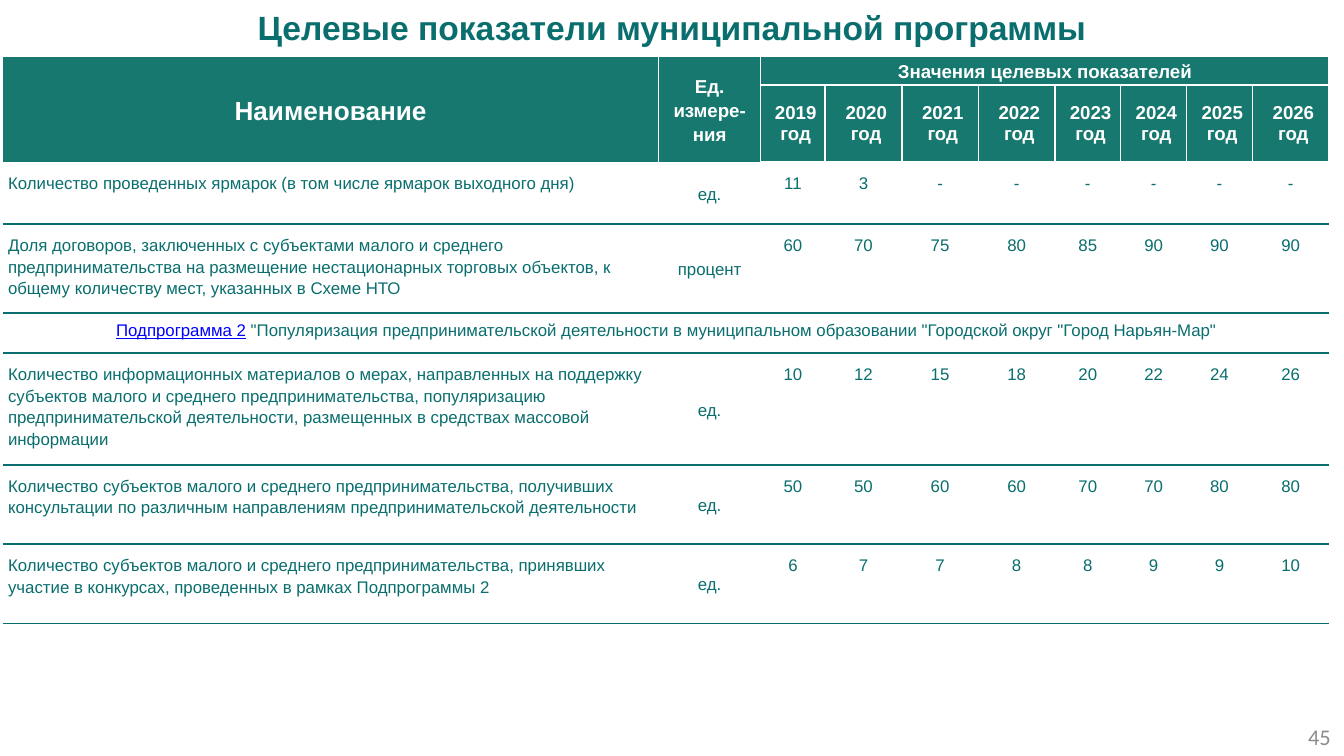
from lxml import etree
from pptx import Presentation
from pptx.dml.color import RGBColor
from pptx.enum.text import MSO_ANCHOR, MSO_AUTO_SIZE, PP_ALIGN
from pptx.oxml.ns import qn
from pptx.util import Inches, Pt

LEFT, CENTER, RIGHT = PP_ALIGN.LEFT, PP_ALIGN.CENTER, PP_ALIGN.RIGHT
TOP, MIDDLE = MSO_ANCHOR.TOP, MSO_ANCHOR.MIDDLE
NO_FIT = MSO_AUTO_SIZE.NONE

TEAL = RGBColor(0x0A, 0x6E, 0x6E)
HEADER_FILL = RGBColor(0x16, 0x78, 0x6E)
WHITE = RGBColor(0xFF, 0xFF, 0xFF)
LINK_BLUE = RGBColor(0x00, 0x00, 0xFF)
GRAY = RGBColor(0x8C, 0x8C, 0x8C)

PLAIN_TABLE_STYLE = "{2D5ABB26-0587-4C30-8999-92F81FD0307C}"
COLUMN_WIDTHS = [4.88, 0.76, 0.48, 0.57, 0.57, 0.57, 0.49, 0.49, 0.49, 0.57]
ROW_HEIGHTS = [0.2, 0.57, 0.46, 0.66, 0.3, 0.83, 0.59, 0.59]
FIRST_YEAR = 2019
FIRST_YEAR_COLUMN = 2

SUBPROGRAM_ROW = 4
SUBPROGRAM = [
    ("Подпрограмма 2", {"color": LINK_BLUE, "underline": True}),
    (' "Популяризация предпринимательской деятельности в муниципальном '
     'образовании "Городской округ "Город Нарьян-Мар"', {}),
]

# Table row: name, unit, values by year
INDICATORS = {
    2: ("Количество проведенных ярмарок (в том числе ярмарок выходного дня)",
        "ед.", [11, 3, "-", "-", "-", "-", "-", "-"]),
    3: ("Доля договоров, заключенных с субъектами малого и среднего "
        "предпринимательства на размещение нестационарных торговых объектов, "
        "к общему количеству мест, указанных в Схеме НТО",
        "процент", [60, 70, 75, 80, 85, 90, 90, 90]),
    5: ("Количество информационных материалов о мерах, направленных на "
        "поддержку субъектов малого и среднего предпринимательства, "
        "популяризацию предпринимательской деятельности, размещенных в "
        "средствах массовой информации",
        "ед.", [10, 12, 15, 18, 20, 22, 24, 26]),
    6: ("Количество субъектов малого и среднего предпринимательства, "
        "получивших консультации по различным направлениям "
        "предпринимательской деятельности",
        "ед.", [50, 50, 60, 60, 70, 70, 80, 80]),
    7: ("Количество субъектов малого и среднего предпринимательства, "
        "принявших участие в конкурсах, проведенных в рамках Подпрограммы 2",
        "ед.", [6, 7, 7, 8, 8, 9, 9, 10]),
}


def write_text(frame, spans, size=9, color=TEAL, bold=False, font="Arial",
               align=CENTER, spacing=None, indent=0):
    """Fill a frame with one paragraph; spans is text or (text, format) pairs."""
    if isinstance(spans, str):
        spans = [(spans, {})]
    para = frame.paragraphs[0]
    para.alignment = align
    if spacing:
        para.line_spacing = spacing
    if indent:
        para._p.get_or_add_pPr().set("marL", str(Inches(indent)))
    for text, look in spans:
        span = para.add_run()
        span.text = text
        span.font.name = font
        span.font.size = Pt(size)
        span.font.bold = bold
        span.font.underline = look.get("underline", False)
        span.font.color.rgb = look.get("color", color)


class SlideBuilder:
    def __init__(self, deck):
        self.slide = deck.slides.add_slide(deck.slide_layouts[5])

    def title(self, text, left, top, width, height):
        box = self.slide.shapes.title
        box.left, box.top = Inches(left), Inches(top)
        box.width, box.height = Inches(width), Inches(height)
        box.text_frame.auto_size = NO_FIT
        box.text_frame.vertical_anchor = MIDDLE
        write_text(box.text_frame, text, size=18, bold=True)

    def page_number(self, text, left, top, width, height):
        box = self.slide.shapes.add_textbox(
            Inches(left), Inches(top), Inches(width), Inches(height))
        box.text_frame.word_wrap = True
        box.text_frame.vertical_anchor = MIDDLE
        write_text(box.text_frame, text, size=12, color=GRAY,
                   font="Calibri", align=RIGHT)

    def table(self, left, top):
        frame = self.slide.shapes.add_table(
            len(ROW_HEIGHTS), len(COLUMN_WIDTHS), Inches(left), Inches(top),
            Inches(sum(COLUMN_WIDTHS)), Inches(sum(ROW_HEIGHTS)))
        table = frame.table
        table.horz_banding = False
        table._tbl.tblPr.find(qn("a:tableStyleId")).text = PLAIN_TABLE_STYLE
        for column, width in zip(table.columns, COLUMN_WIDTHS):
            column.width = Inches(width)
        for row, height in zip(table.rows, ROW_HEIGHTS):
            row.height = Inches(height)
        return table

    def borders(self, cell, sides, color):
        properties = cell._tc.get_or_add_tcPr()
        for side in sides:
            line = etree.SubElement(properties, qn(f"a:ln{side}"), w=str(Pt(1)))
            fill = etree.SubElement(line, qn("a:solidFill"))
            etree.SubElement(fill, qn("a:srgbClr"), val=str(color))

    def cell(self, cell, spans, side=0.04, edge=0.07, anchor=TOP,
             spacing=1.15, **look):
        cell.margin_left = cell.margin_right = Inches(side)
        cell.margin_top = cell.margin_bottom = Inches(edge)
        cell.vertical_anchor = anchor
        write_text(cell.text_frame, spans, spacing=spacing, **look)

    def header_cell(self, cell, text, size=10, side=0, edge=0.01, **look):
        self.cell(cell, text, side=side, edge=edge, anchor=MIDDLE, size=size,
                  color=WHITE, bold=True, **look)


def build_header(builder, table):
    years = range(FIRST_YEAR_COLUMN, len(COLUMN_WIDTHS))
    for column in range(len(COLUMN_WIDTHS)):
        for row in range(2):
            cell = table.cell(row, column)
            if row == 0 and column > FIRST_YEAR_COLUMN:
                sides = "TB"
            elif row == 1 and column < FIRST_YEAR_COLUMN:
                sides = "LR"
            else:
                sides = "LRT"
            builder.borders(cell, sides, WHITE)
            cell.fill.solid()
            cell.fill.fore_color.rgb = HEADER_FILL

    for column in range(FIRST_YEAR_COLUMN):
        table.cell(0, column).merge(table.cell(1, column))
    table.cell(0, FIRST_YEAR_COLUMN).merge(table.cell(0, years[-1]))

    builder.header_cell(table.cell(0, 0), "Наименование", size=14)
    builder.header_cell(table.cell(0, 1), "Ед. измере-ния", side=0.08, edge=0)
    builder.header_cell(table.cell(0, FIRST_YEAR_COLUMN),
                        "Значения целевых показателей")
    for year, column in enumerate(years, FIRST_YEAR):
        builder.header_cell(table.cell(1, column), f"{year} год",
                            spacing=None, indent=0.04)


def build_body(builder, table):
    for row in range(2, len(ROW_HEIGHTS)):
        for column in range(len(COLUMN_WIDTHS)):
            cell = table.cell(row, column)
            builder.borders(cell, "B", TEAL)
            cell.fill.background()

    for row, (name, unit, values) in INDICATORS.items():
        builder.cell(table.cell(row, 0), name, align=LEFT)
        builder.cell(table.cell(row, 1), unit, anchor=MIDDLE)
        for column, value in enumerate(values, FIRST_YEAR_COLUMN):
            builder.cell(table.cell(row, column), str(value))

    subprogram = table.cell(SUBPROGRAM_ROW, 0)
    subprogram.merge(table.cell(SUBPROGRAM_ROW, len(COLUMN_WIDTHS) - 1))
    builder.cell(subprogram, SUBPROGRAM, edge=0.04)


def main():
    deck = Presentation()
    # Widescreen, 16:9
    deck.slide_width = Inches(10)
    deck.slide_height = deck.slide_width * 9 // 16
    builder = SlideBuilder(deck)

    # Title and page number
    builder.title("Целевые показатели муниципальной программы", 0, 0, 10, 0.4)
    builder.page_number("45", 7.67, 5.33, 2.33, 0.3)

    # Indicator table
    table = builder.table(0.02, 0.42)
    build_header(builder, table)
    build_body(builder, table)

    deck.save("out.pptx")


if __name__ == "__main__":
    main()
